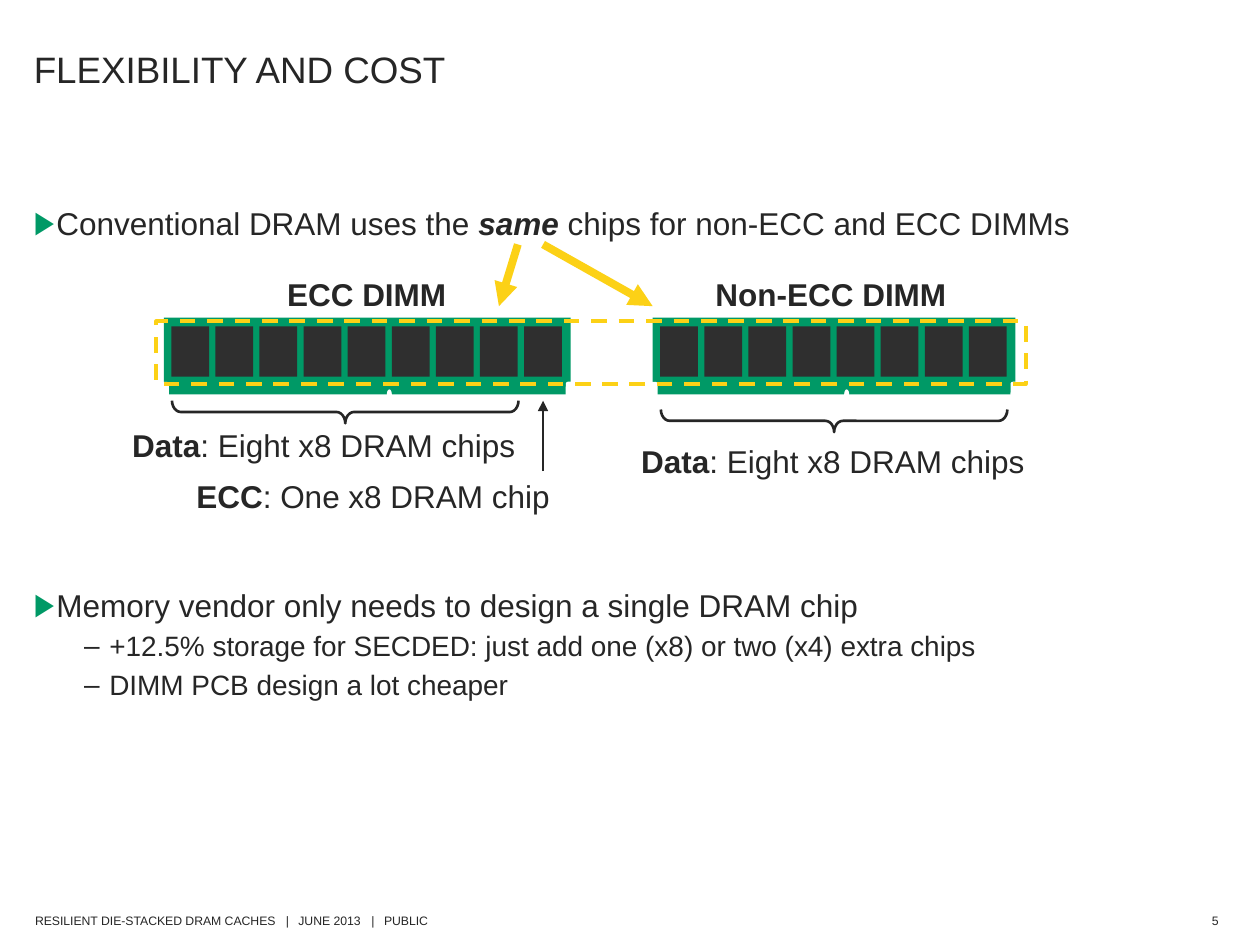
from typing import NamedTuple

from lxml import etree
from pptx import Presentation
from pptx.dml.color import RGBColor
from pptx.enum.dml import MSO_LINE
from pptx.enum.shapes import MSO_CONNECTOR, MSO_SHAPE
from pptx.enum.text import MSO_ANCHOR, PP_ALIGN
from pptx.oxml.ns import qn
from pptx.util import Inches, Pt

RECT, ROUND, OVAL = MSO_SHAPE.RECTANGLE, MSO_SHAPE.ROUNDED_RECTANGLE, MSO_SHAPE.OVAL
BRACE = MSO_SHAPE.RIGHT_BRACE
STRAIGHT, DASH = MSO_CONNECTOR.STRAIGHT, MSO_LINE.DASH
MIDDLE, RIGHT = MSO_ANCHOR.MIDDLE, PP_ALIGN.RIGHT

INK, GREEN, CHIP, GOLD, WHITE = "262626", "009966", "2F2F2F", "FCD116", "FFFFFF"
PITCH = 0.35


class Run(NamedTuple):
    text: str
    bold: bool = False
    slant: bool = False


class Label(NamedTuple):
    x: float
    y: float
    wide: float
    runs: list[Run]


class Bullet(NamedTuple):
    runs: list[Run]
    level: int = 0


class Style(NamedTuple):
    mark: str
    color: str
    left: float
    hang: float
    size: int
    gap: int


class Dimm(NamedTuple):
    x: float
    chips: int
    notch: float
    brace: float


class Arrow(NamedTuple):
    x1: float
    y1: float
    x2: float
    y2: float
    color: str
    width: float


STYLES = [Style("▶", GREEN, 0.18, 0.18, 18, 8), Style("–", INK, 0.6, 0.2, 16, 3)]

DIMMS = [Dimm(1.3, 9, 1.77, 3.18), Dimm(5.18, 8, 1.52, 3.25)]

DATA = [Run("Data", True), Run(": Eight x8 DRAM chips")]
LABELS = [
    Label(0.95, 3.33, 3.26, DATA),
    Label(1.46, 3.74, 3.03, [Run("ECC", True), Run(": One x8 DRAM chip")]),
    Label(4.99, 3.46, 3.26, DATA),
    Label(2.18, 2.13, 1.48, [Run("ECC DIMM", True)]),
    Label(5.58, 2.13, 2.05, [Run("Non-ECC DIMM", True)]),
]

ARROWS = [
    Arrow(4.31, 3.74, 4.31, 3.18, INK, 1.5),
    Arrow(4.11, 1.94, 3.96, 2.43, GOLD, 4.5),
    Arrow(4.31, 1.94, 5.18, 2.43, GOLD, 4.5),
]

USES = [Bullet([Run("Conventional DRAM uses the "), Run("same", True, True),
                Run(" chips for non-ECC and ECC DIMMs")])]
COSTS = [
    Bullet([Run("Memory vendor only needs to design a single DRAM chip")]),
    Bullet([Run("+12.5% storage for SECDED: just add one (x8) or two (x4) extra chips")], 1),
    Bullet([Run("DIMM PCB design a lot cheaper")], 1),
]


def paint(target, color: str) -> None:
    target.rgb = RGBColor.from_string(color)


def add_box(slide, x: float, y: float, w: float, h: float, wrap: bool = True):
    box = slide.shapes.add_textbox(Inches(x), Inches(y), Inches(w), Inches(h))
    box.text_frame.word_wrap = wrap
    return box.text_frame


def write(para, runs: list[Run], size: float) -> None:
    para.font.name = "Arial"
    para.font.size = Pt(size)
    paint(para.font.color, INK)
    for item in runs:
        run = para.add_run()
        run.text = item.text
        if item.bold:
            run.font.bold = True
        if item.slant:
            run.font.italic = True


def add_mark(para, style: Style) -> None:
    props = para._p.get_or_add_pPr()
    props.set("marL", str(Inches(style.left)))
    props.set("indent", str(-Inches(style.hang)))
    tint = etree.SubElement(props, qn("a:buClr"))
    etree.SubElement(tint, qn("a:srgbClr"), val=style.color)
    etree.SubElement(props, qn("a:buFont"), typeface="Arial")
    etree.SubElement(props, qn("a:buChar"), char=style.mark)


def add_list(slide, y: float, h: float, items: list[Bullet]) -> None:
    frame = add_box(slide, 0.17, y, 9, h)
    for i, item in enumerate(items):
        para = frame.add_paragraph() if i else frame.paragraphs[0]
        style = STYLES[item.level]
        para.level = item.level
        add_mark(para, style)
        if i:
            para.space_before = Pt(style.gap)
        write(para, item.runs, style.size)


def add_form(shapes, kind, x: float, y: float, w: float, h: float,
             fill: str = "", line: str = "", width: float = 0):
    form = shapes.add_shape(kind, Inches(x), Inches(y), Inches(w), Inches(h))
    form.shadow.inherit = False
    if fill:
        form.fill.solid()
        paint(form.fill.fore_color, fill)
    else:
        form.fill.background()
    if line:
        paint(form.line.color, line)
        form.line.width = Pt(width)
    else:
        form.line.fill.background()
    return form


def add_dimm(slide, dimm: Dimm) -> None:
    shapes = slide.shapes.add_group_shape().shapes
    wide = dimm.chips * PITCH + 0.08
    add_form(shapes, RECT, dimm.x, 2.52, wide, 0.61, GREEN)
    for i in range(dimm.chips):
        add_form(shapes, RECT, dimm.x + 0.06 + i * PITCH, 2.59, 0.3, 0.4, CHIP)
    for x in (dimm.x - 0.07, dimm.x + wide - 0.04):
        add_form(shapes, ROUND, x, 3.03, 0.11, 0.15, WHITE)
    add_form(shapes, OVAL, dimm.x + dimm.notch, 3.09, 0.04, 0.08, WHITE)


def add_brace(slide, dimm: Dimm) -> None:
    # Turned about its centre to lie under the eight data chips
    mid, thick, span = dimm.x + 1.44, 0.18, 2.75
    brace = add_form(slide.shapes, BRACE, mid - thick / 2,
                     dimm.brace + (thick - span) / 2, thick, span, line=INK, width=1.5)
    brace.adjustments[0] = 0.385
    brace.rotation = 90


def add_arrow(slide, arrow: Arrow) -> None:
    ends = [Inches(v) for v in arrow[:4]]
    link = slide.shapes.add_connector(STRAIGHT, *ends)
    paint(link.line.color, arrow.color)
    link.line.width = Pt(arrow.width)
    etree.SubElement(link.line._get_or_add_ln(), qn("a:tailEnd"), type="triangle")
    etree.SubElement(link._element.spPr, qn("a:effectLst"))


def add_foot(slide) -> None:
    page = add_box(slide, 9.47, 7.2, 0.3, 0.21, False)
    note = add_box(slide, 0.18, 7.2, 3.33, 0.21, False)
    page.vertical_anchor = note.vertical_anchor = MIDDLE
    page.paragraphs[0].alignment = RIGHT
    write(page.paragraphs[0], [Run("5")], 7)
    para = note.paragraphs[0]
    tabs = etree.SubElement(para._p.get_or_add_pPr(), qn("a:tabLst"))
    for stop in (1.99, 2.09, 2.67, 2.77):
        etree.SubElement(tabs, qn("a:tab"), pos=str(Inches(stop)), algn="l")
    write(para, [Run("RESILIENT DIE-STACKED DRAM CACHES\t|\tJUNE 2013\t|\tPUBLIC")], 7)


def main() -> None:
    deck = Presentation()
    deck.slide_width, deck.slide_height = Inches(10), Inches(7.5)
    slide = deck.slides.add_slide(deck.slide_layouts[6])

    # Footer, title and first point
    add_foot(slide)
    title = add_box(slide, 0.17, 0.2, 8.2, 0.7)
    title.vertical_anchor = MIDDLE
    write(title.paragraphs[0], [Run("FLEXIBILITY AND COST")], 21)
    add_list(slide, 1.57, 0.47, USES)

    # Memory modules with their braces and labels
    for dimm in DIMMS:
        add_dimm(slide, dimm)
        add_brace(slide, dimm)
    for label in LABELS:
        frame = add_box(slide, label.x, label.y, label.wide, 0.4, False)
        write(frame.paragraphs[0], label.runs, 18)

    # Dashed frame around the shared chips, and arrows
    frame = add_form(slide.shapes, RECT, 1.24, 2.55, 6.9, 0.5, line=GOLD, width=2.25)
    frame.line.dash_style = DASH
    for arrow in ARROWS:
        add_arrow(slide, arrow)

    # Second point
    add_list(slide, 4.6, 1.19, COSTS)
    deck.save("out.pptx")


if __name__ == "__main__":
    main()
